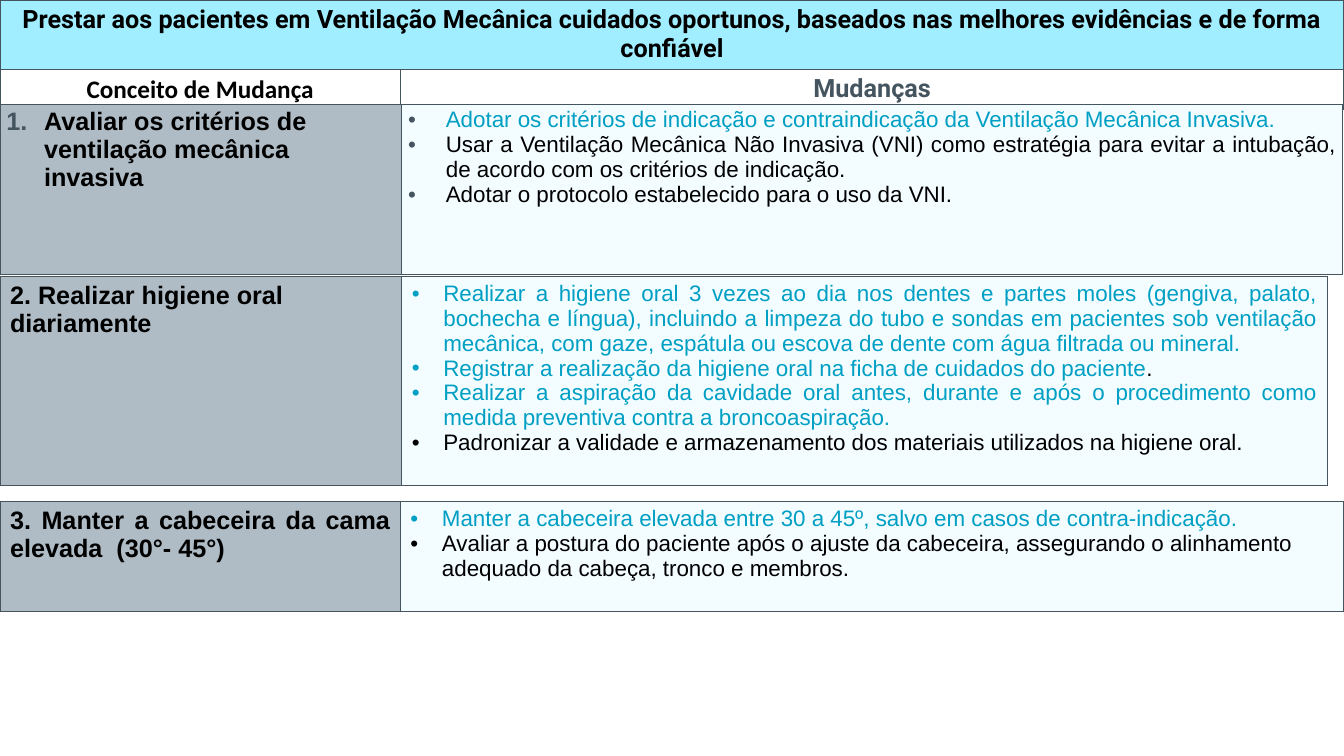
from lxml import etree
from pptx import Presentation
from pptx.dml.color import RGBColor
from pptx.enum.text import MSO_ANCHOR, PP_ALIGN
from pptx.oxml.ns import qn
from pptx.util import Pt

LEFT, CENTER, JUSTIFY = PP_ALIGN.LEFT, PP_ALIGN.CENTER, PP_ALIGN.JUSTIFY
TOP, MIDDLE = MSO_ANCHOR.TOP, MSO_ANCHOR.MIDDLE
COLORS = {
    "header": "A0EEFF", "white": "FFFFFF", "concept": "AFBCC5", "change": "F3FCFF",
    "slate": "455560", "blue": "009FC3", "black": "000000",
}
DEFAULT_MARGINS = (7.2, 3.6, 7.2, 3.6)
NARROW_MARGINS = (4.5, 2.25, 4.5, 2.25)


def write_cell(cell, paragraphs, fill, size=18, bold=True, font="Arial", align=LEFT,
               anchor=TOP, margins=DEFAULT_MARGINS, bullet=None, indent=0,
               bullet_color=None, border=1):
    properties = cell._tc.get_or_add_tcPr()
    for side in ("a:lnL", "a:lnR", "a:lnT", "a:lnB"):
        line = etree.SubElement(properties, qn(side), w=str(Pt(border)))
        line_fill = etree.SubElement(line, qn("a:solidFill"))
        etree.SubElement(line_fill, qn("a:srgbClr"), val=COLORS["slate"])
    cell.fill.solid()
    cell.fill.fore_color.rgb = RGBColor.from_string(COLORS[fill])
    cell.vertical_anchor = anchor
    cell.margin_left, cell.margin_top, cell.margin_right, cell.margin_bottom = map(Pt, margins)
    for index, runs in enumerate(paragraphs):
        text_frame = cell.text_frame
        paragraph = text_frame.add_paragraph() if index else text_frame.paragraphs[0]
        paragraph.alignment = align
        if bullet:
            format_element = paragraph._p.get_or_add_pPr()
            format_element.set("marL", str(Pt(indent)))
            format_element.set("indent", str(-Pt(indent)))
            if bullet_color:
                color = etree.SubElement(format_element, qn("a:buClr"))
                etree.SubElement(color, qn("a:srgbClr"), val=COLORS[bullet_color])
            etree.SubElement(format_element, qn("a:buFont"), typeface="Arial")
            if bullet == "1.":
                etree.SubElement(format_element, qn("a:buAutoNum"), type="arabicPeriod")
            else:
                etree.SubElement(format_element, qn("a:buChar"), char=bullet)
        for text, color in runs:
            run = paragraph.add_run()
            run.text = text
            run.font.name = font
            run.font.size = Pt(size)
            run.font.bold = bold
            run.font.color.rgb = RGBColor.from_string(COLORS[color])


def add_plain_table(slide, top, widths, heights):
    table = slide.shapes.add_table(len(heights), len(widths), Pt(0), Pt(top),
                                   Pt(sum(widths)), Pt(sum(heights))).table
    table.first_row = False
    table.horz_banding = False
    for column, width in zip(table.columns, widths):
        column.width = Pt(width)
    for row, height in zip(table.rows, heights):
        row.height = Pt(height)
    return table


presentation = Presentation()
presentation.slide_width = Pt(960)
presentation.slide_height = Pt(540)
slide = presentation.slides.add_slide(presentation.slide_layouts[6])

heading = add_plain_table(slide, 0, (286, 674), (49, 28))
heading.cell(0, 0).merge(heading.cell(0, 1))
write_cell(heading.cell(0, 0), [[(
    "Prestar aos pacientes em Ventilação Mecânica cuidados oportunos, baseados nas melhores "
    "evidências e de forma confiável", "black")]],
    fill="header", font="Roboto", align=CENTER)
write_cell(heading.cell(0, 1), [], fill="header")
write_cell(heading.cell(1, 0), [[("Conceito de Mudança", "black")]], fill="white",
           font="Calibri", align=CENTER, anchor=MIDDLE, margins=(0.7, 0.7, 0.7, 0))
write_cell(heading.cell(1, 1), [[("Mudanças", "slate")]], fill="white",
           font="Roboto", align=CENTER, anchor=MIDDLE)

sections = [
    {
        "top": 74.7, "widths": (287, 672), "height": 121.5,
        "concept": "Avaliar os critérios de ventilação mecânica invasiva",
        "changes": [
            [("Adotar os critérios de indicação e contraindicação da Ventilação Mecânica "
              "Invasiva.", "blue")],
            [("Usar a Ventilação Mecânica Não Invasiva (VNI) como estratégia para evitar a "
              "intubação, de acordo com os critérios de indicação.", "black")],
            [("Adotar o protocolo estabelecido para o uso da VNI.", "black")],
        ],
        "shared": {"margins": NARROW_MARGINS, "border": 0.75, "bullet_color": "slate"},
        "concept_format": {"bullet": "1.", "indent": 27},
        "change_format": {"align": JUSTIFY, "indent": 27},
    },
    {
        "top": 197.3, "widths": (287, 661), "height": 149.5,
        "concept": "2. Realizar higiene oral diariamente",
        "changes": [
            [("Realizar a higiene oral 3 vezes ao dia nos dentes e partes moles (gengiva, "
              "palato, bochecha e língua), incluindo a limpeza do tubo e sondas em pacientes "
              "sob ventilação mecânica, com gaze, espátula ou escova de dente com água "
              "filtrada ou mineral.", "blue")],
            [("Registrar a realização da higiene oral na ficha de cuidados do paciente", "blue"),
             (".", "black")],
            [("Realizar a aspiração da cavidade oral antes, durante e após o procedimento como "
              "medida preventiva contra a broncoaspiração.", "blue")],
            [("Padronizar a validade e armazenamento dos materiais utilizados na higiene "
              "oral.", "black")],
        ],
        "shared": {},
        "concept_format": {},
        "change_format": {"align": JUSTIFY, "indent": 22.5},
    },
    {
        "top": 358.3, "widths": (286, 674), "height": 78.5,
        "concept": "3. Manter a cabeceira da cama elevada  (30°- 45°)",
        "changes": [
            [("Manter a cabeceira elevada entre 30 a 45º, salvo em casos de "
              "contra-indicação.", "blue")],
            [("Avaliar a postura do paciente após o ajuste da cabeceira, assegurando o "
              "alinhamento adequado da cabeça, tronco e membros.", "black")],
        ],
        "shared": {},
        "concept_format": {"align": JUSTIFY},
        "change_format": {"indent": 22.5},
    },
]
for section in sections:
    table = add_plain_table(slide, section["top"], section["widths"], (section["height"],))
    write_cell(table.cell(0, 0), [[(section["concept"], "black")]], fill="concept",
               **section["shared"], **section["concept_format"])
    write_cell(table.cell(0, 1), section["changes"], fill="change", size=16, bold=False,
               bullet="•", **section["shared"], **section["change_format"])

presentation.save("out.pptx")
